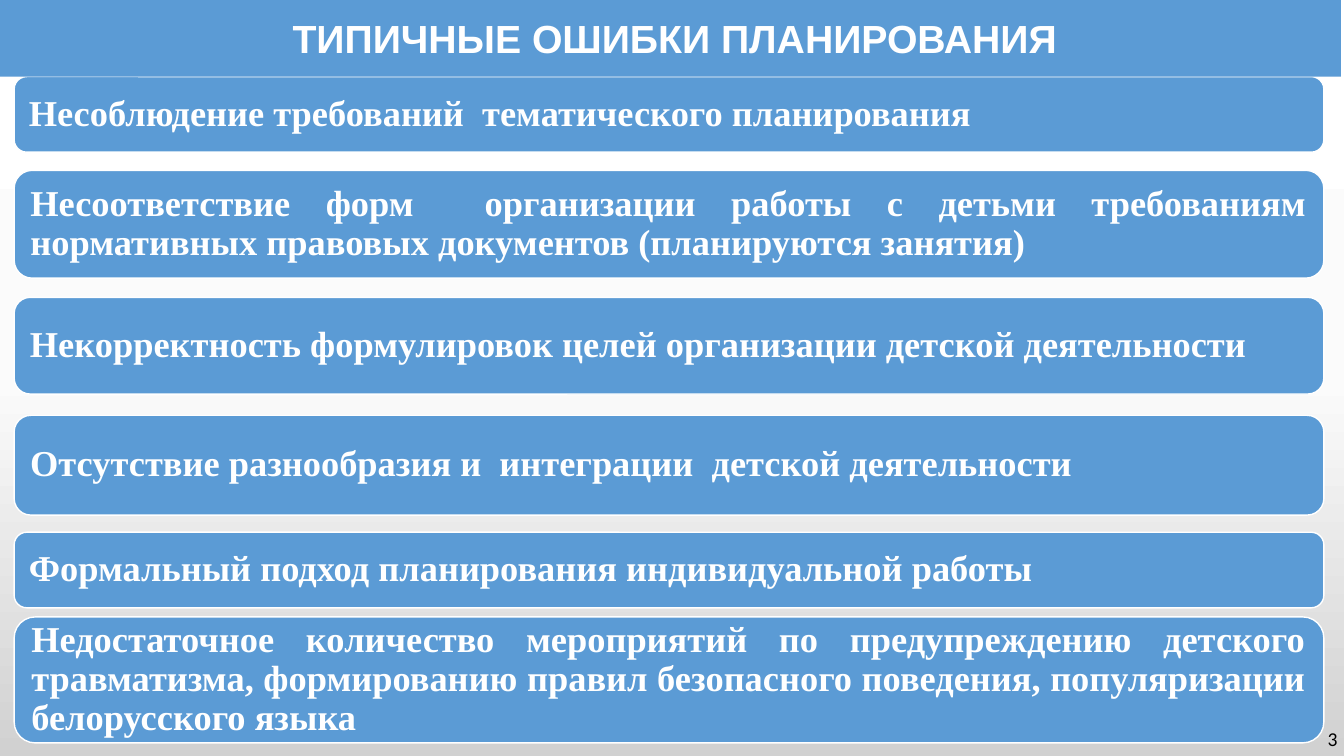
import copy

import pptx
import pptx.dml.color
import pptx.enum.shapes
import pptx.enum.text
import pptx.oxml.ns
import pptx.util

Inches = pptx.util.Inches
Align = pptx.enum.text.PP_ALIGN
Anchor = pptx.enum.text.MSO_ANCHOR
Shape = pptx.enum.shapes.MSO_SHAPE

# Content
TITLE = "ТИПИЧНЫЕ ОШИБКИ ПЛАНИРОВАНИЯ"
PAGE_NUMBER = "3"
MISTAKES = [  # top, height, text
    (0.76, 0.75, "Несоблюдение требований  тематического планирования"),
    (1.69, 1.07, "Несоответствие форм  организации работы с детьми требованиям "
                 "нормативных правовых документов (планируются занятия)"),
    (2.95, 0.96, "Некорректность формулировок целей организации детской деятельности"),
    (4.12, 0.99, "Отсутствие разнообразия и  интеграции  детской деятельности"),
    (5.28, 0.75, "Формальный подход планирования индивидуальной работы"),
    (6.12, 1.25, "Недостаточное количество мероприятий по предупреждению детского "
                 "травматизма, формированию правил безопасного поведения, "
                 "популяризации белорусского языка"),
]
BACKGROUND = [(0, "FFFFFF"), (0.5, "FBFBFB"), (1, "D1D1D1")]
BLUE, WHITE, BLACK = "5B9BD5", "FFFFFF", "000000"


def color(value):
    return pptx.dml.color.RGBColor.from_string(value)


def write(box, text, *, size, font, ink=WHITE, bold=True, align=Align.LEFT,
          anchor=Anchor.MIDDLE, spacing=0.9, wrap=True, inset=None):
    frame = box.text_frame
    frame.word_wrap = wrap
    frame.auto_size = pptx.enum.text.MSO_AUTO_SIZE.NONE
    frame.vertical_anchor = anchor
    if inset is not None:
        frame.margin_left = frame.margin_right = Inches(inset)
        frame.margin_top = frame.margin_bottom = Inches(inset)
    para = frame.paragraphs[0]
    para.alignment = align
    para.line_spacing = spacing
    para.space_before = pptx.util.Pt(0)
    span = para.add_run()
    span.text = text
    span.font.size = pptx.util.Pt(size)
    span.font.name = font
    span.font.bold = bold
    span.font.color.rgb = color(ink)


def add_panel(page, kind, left, top, width, height, outline=None):
    panel = page.shapes.add_shape(
        kind, Inches(left), Inches(top), Inches(width), Inches(height))
    panel.shadow.inherit = False
    panel.fill.solid()
    panel.fill.fore_color.rgb = color(BLUE)
    if outline:
        panel.line.color.rgb = color(outline)
        panel.line.width = pptx.util.Pt(1)
    else:
        panel.line.fill.background()
    return panel


def paint_background(page):
    fill = page.background.fill
    fill.gradient()
    fill.gradient_angle = 270
    stops = page.element.find(".//" + pptx.oxml.ns.qn("a:gsLst"))
    stops.insert(1, copy.deepcopy(stops[0]))
    for stop, (position, shade) in zip(fill.gradient_stops, BACKGROUND):
        stop.position = position
        stop.color.rgb = color(shade)


def main():
    deck = pptx.Presentation()
    deck.slide_width, deck.slide_height = Inches(13.33), Inches(7.5)
    page = deck.slides.add_slide(deck.slide_layouts[5])
    paint_background(page)

    # Mistake panels
    for top, height, text in MISTAKES:
        panel = add_panel(page, Shape.ROUNDED_RECTANGLE, 0.14, top, 12.99, height, WHITE)
        write(panel, text, size=26, font="Times New Roman",
              align=Align.JUSTIFY, inset=0.11)

    # Title on its band
    band = add_panel(page, Shape.RECTANGLE, -0.03, -0.03, 13.33, 0.79)
    title = page.shapes.title
    title.left, title.top = Inches(0.27), Inches(0.14)
    title.width, title.height = Inches(12.84), Inches(0.53)
    write(title, TITLE, size=28, font="Arial", align=Align.CENTER)
    band.element.addnext(title.element)

    # Page number
    number = page.shapes.add_textbox(
        Inches(13.07), Inches(7.16), Inches(0.27), Inches(0.34))
    write(number, PAGE_NUMBER, size=14, font="Calibri", ink=BLACK, bold=False,
          anchor=Anchor.TOP, spacing=1.0, wrap=False)

    deck.save("out.pptx")


if __name__ == "__main__":
    main()
